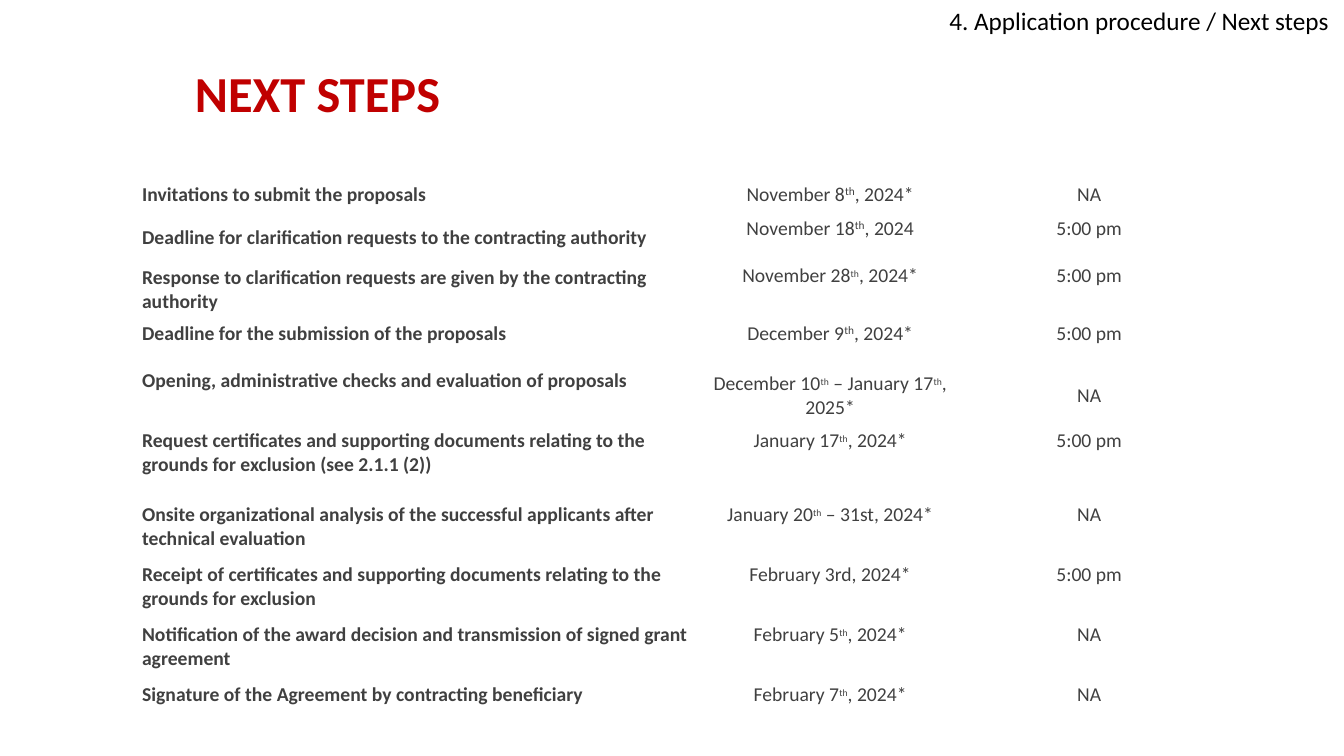
from lxml import etree
from pptx import Presentation
from pptx.dml.color import RGBColor
from pptx.enum.text import MSO_ANCHOR, MSO_AUTO_SIZE, PP_ALIGN
from pptx.oxml.ns import qn
from pptx.util import Pt

TOP, MIDDLE = MSO_ANCHOR.TOP, MSO_ANCHOR.MIDDLE
LEFT, CENTER = PP_ALIGN.LEFT, PP_ALIGN.CENTER

# Content
TITLE = "NEXT STEPS"
SECTION = "4. Application procedure / Next steps"
# step, date (ordinals between carets), ordinal size, time, row height, anchors
STEPS = [
    ("Invitations to submit the proposals",
     "November 8^th^, 2024*", 14, "NA", 24.5, (TOP, TOP)),
    ("Deadline for clarification requests to the contracting authority",
     "November 18^th^, 2024", 14, "5:00 pm", 33.75, (MIDDLE, TOP)),
    ("Response to clarification requests are given by the contracting authority",
     "November 28^th^, 2024*", 12, "5:00 pm", 41, (MIDDLE, TOP)),
    ("Deadline for the submission of the proposals",
     "December 9^th^, 2024*", 14, "5:00 pm", 33.75, (TOP, TOP)),
    ("Opening, administrative checks and evaluation of proposals",
     "December 10^th^ – January 17^th^, 2025*", 12, "NA", 43, (TOP, MIDDLE)),
    ("Request certificates and supporting documents relating to the "
     "grounds for exclusion (see 2.1.1 (2))",
     "January 17^th^, 2024*", 12, "5:00 pm", 52.75, (TOP, TOP)),
    ("Onsite organizational analysis of the successful applicants after "
     "technical evaluation",
     "January 20^th^ – 31st, 2024*", 12, "NA", 43, (TOP, TOP)),
    ("Receipt of certificates and supporting documents relating to the "
     "grounds for exclusion",
     "February 3rd, 2024*", 12, "5:00 pm", 43, (TOP, TOP)),
    ("Notification of the award decision and transmission of signed grant agreement",
     "February 5^th^, 2024*", 12, "NA", 43, (TOP, TOP)),
    ("Signature of the Agreement by contracting beneficiary",
     "February 7^th^, 2024*", 12, "NA", 33.75, (TOP, TOP)),
]
COL_WIDTHS = [404, 188, 182]
COLORS = {"title": "C00000", "body": "404040", "section": "000000", "white": "FFFFFF"}
FONT = "Calibri"


def add_run(p, text, size, color, bold=False, raised=False):
    r = p.add_run()
    r.text = text
    r.font.name, r.font.size, r.font.bold = FONT, Pt(size), bold
    r.font.color.rgb = RGBColor.from_string(COLORS[color])
    if raised:
        r.font._element.set("baseline", "30000")


def add_borders(cell):
    tc_pr = cell._tc.get_or_add_tcPr()
    for side in ("a:lnL", "a:lnR", "a:lnT", "a:lnB"):
        ln = etree.SubElement(tc_pr, qn(side), w=str(Pt(0.5)))
        fill = etree.SubElement(ln, qn("a:solidFill"))
        etree.SubElement(fill, qn("a:srgbClr"), val=COLORS["white"])


def fill_cell(cell, text, anchor, align, bold=False, raised_size=14):
    cell.margin_left = Pt(5)
    cell.margin_right = Pt(5 if align == LEFT else 8)
    cell.margin_top = cell.margin_bottom = Pt(2.25)
    cell.vertical_anchor = anchor
    p = cell.text_frame.paragraphs[0]
    p.alignment = align
    for i, part in enumerate(text.split("^")):
        raised = i % 2 == 1
        add_run(p, part, raised_size if raised else 14, "body", bold, raised)


prs = Presentation()
prs.slide_width, prs.slide_height = Pt(960), Pt(540)
s = prs.slides.add_slide(prs.slide_layouts[5])

# Title
title = s.shapes.title
title.left, title.top, title.width, title.height = Pt(132), Pt(46), Pt(583), Pt(90)
tf = title.text_frame
tf.vertical_anchor = TOP
tf.word_wrap = True
p = tf.paragraphs[0]
p.alignment, p.line_spacing = LEFT, 0.9
add_run(p, TITLE, 36, "title", bold=True)

# Timetable
heights = [step[4] for step in STEPS]
frame = s.shapes.add_table(len(STEPS), len(COL_WIDTHS), Pt(96.5), Pt(128.25),
                           Pt(sum(COL_WIDTHS)), Pt(sum(heights)))
table = frame.table
table.first_row = table.horz_banding = False
for column, width in zip(table.columns, COL_WIDTHS):
    column.width = Pt(width)
for row, (step, date, raised_size, time, height, anchors) in zip(table.rows, STEPS):
    row.height = Pt(height)
    for cell in row.cells:
        add_borders(cell)
        cell.fill.background()
    step_cell, date_cell, time_cell = row.cells
    step_cell.fill.solid()
    step_cell.fill.fore_color.rgb = RGBColor.from_string(COLORS["white"])
    fill_cell(step_cell, step, anchors[0], LEFT, bold=True)
    fill_cell(date_cell, date, anchors[1], CENTER, raised_size=raised_size)
    fill_cell(time_cell, time, anchors[1], CENTER)

# Section label
label = s.shapes.add_textbox(Pt(671), Pt(0), Pt(289), Pt(29))
tf = label.text_frame
tf.word_wrap = False
tf.auto_size = MSO_AUTO_SIZE.SHAPE_TO_FIT_TEXT
add_run(tf.paragraphs[0], SECTION, 18, "section")

prs.save("out.pptx")
